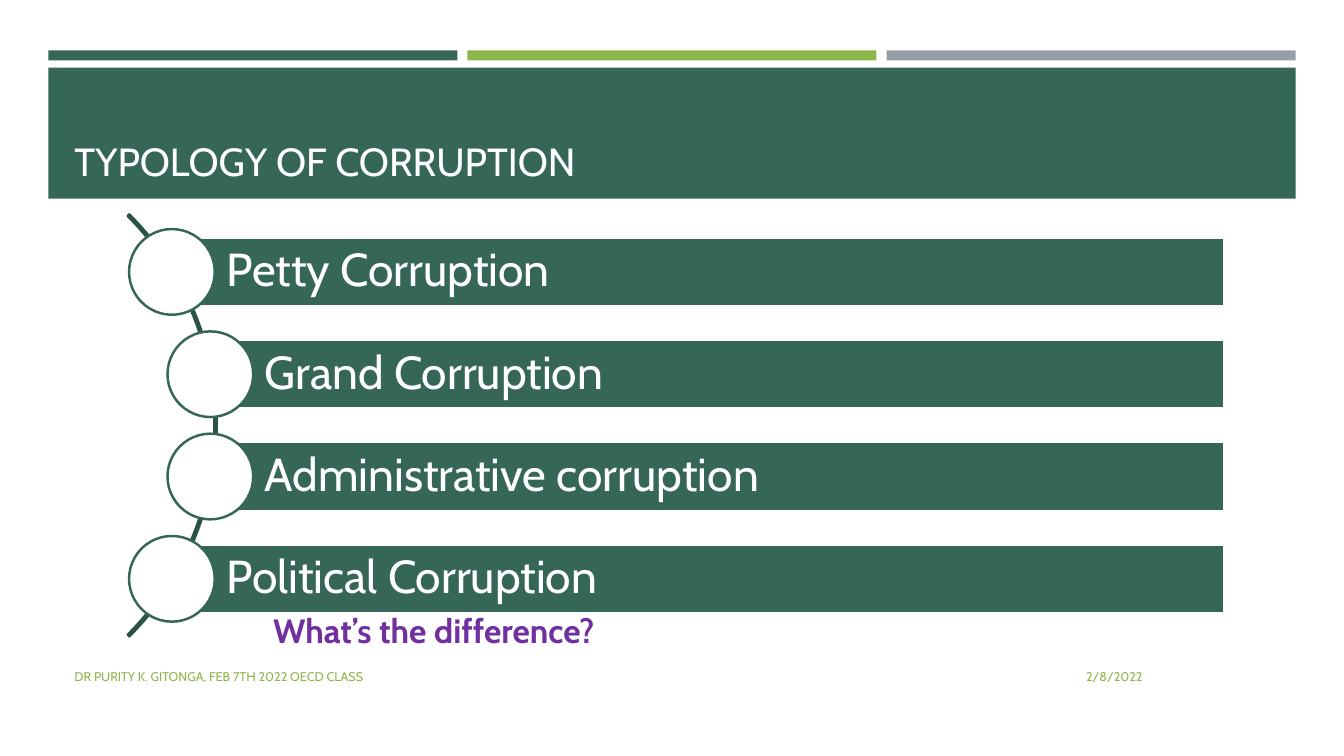
from math import sqrt
from pptx import Presentation
from pptx import util as u
from pptx.dml.color import RGBColor
from pptx.enum import shapes, text

WIDE, HIGH = 13.33, 7.5
GREEN, LIME, GREY = "366658", "8CB64A", "969FA7"
DARK, WHITE, PURPLE = "2B5246", "FFFFFF", "7030A0"
FORM = shapes.MSO_SHAPE
ALIGN = text.PP_ALIGN
ANCHOR = text.MSO_ANCHOR


def tint(code):
    return RGBColor.from_string(code)


def draw(slide, form, box, fill=None, line=None):
    part = slide.shapes.add_shape(form, *map(u.Inches, box))
    part.shadow.inherit = False
    if fill:
        part.fill.solid()
        part.fill.fore_color.rgb = tint(fill)
    else:
        part.fill.background()
    if line:
        part.line.color.rgb = tint(line)
        part.line.width = u.Pt(1.75)
    else:
        part.line.fill.background()
    return part


def write(part, words, size, color, bold=False, align=ALIGN.LEFT,
          anchor=ANCHOR.MIDDLE, inset=0.1, space=1.0):
    frame = part.text_frame
    frame.word_wrap = True
    frame.vertical_anchor = anchor
    frame.margin_left = u.Inches(inset)
    para = frame.paragraphs[0]
    para.alignment = align
    para.line_spacing = space
    run = para.add_run()
    run.text = words
    run.font.name = "Cabin"
    run.font.size = u.Pt(size)
    run.font.bold = bold
    run.font.color.rgb = tint(color)


def label(slide, box, words, size, color, **form):
    part = slide.shapes.add_textbox(*map(u.Inches, box))
    write(part, words, size, color, **form)


def header(slide, box, title):
    left, top, width, height = box
    gap = 0.1
    strip = (width - 2 * gap) / 3
    for col, fill in enumerate((GREEN, LIME, GREY)):
        draw(slide, FORM.RECTANGLE,
             (left + col * (strip + gap), top, strip, 0.1), fill)
    band = top + 0.17
    draw(slide, FORM.RECTANGLE, (left, band, width, height - 0.17), GREEN)
    label(slide, (left + 0.16, band + 0.1, width - 0.32, height - 0.36),
          title, 28, WHITE, anchor=ANCHOR.BOTTOM)


def arc_list(slide, box, names):
    left, top, width, height = box
    ring, orbit, bar, node = 2.96, 2.94, 0.68, 0.85
    hub, mid = left - 2.08, top + height / 2
    arc = draw(slide, FORM.BLOCK_ARC,
               (hub - ring, mid - ring, 2 * ring, 2 * ring), line=DARK)
    for index, value in enumerate((189, 27, 0.004)):
        arc.adjustments[index] = value
    pitch = height / len(names)
    for row, name in enumerate(names):
        drop = (row - (len(names) - 1) / 2) * pitch
        x, y = hub + sqrt(orbit ** 2 - drop ** 2), mid + drop
        strip = draw(slide, FORM.RECTANGLE,
                     (x, y - bar / 2, left + width - x, bar), GREEN, WHITE)
        write(strip, name, 33, WHITE, inset=0.54, space=0.9)
        draw(slide, FORM.OVAL,
             (x - node / 2, y - node / 2, node, node), WHITE, GREEN)


def footer(slide, box, note, date):
    left, top, width, height = box
    label(slide, (left + width - 3.11, top, 3.11, height), date, 9, LIME,
          align=ALIGN.RIGHT)
    label(slide, (left, top, 7.56, height), note, 9, LIME)


def main():
    deck = Presentation()
    deck.slide_width, deck.slide_height = u.Inches(WIDE), u.Inches(HIGH)
    slide = deck.slides.add_slide(deck.slide_layouts[6])
    header(slide, (0.48, 0.5, 12.37, 1.47), "TYPOLOGY OF CORRUPTION")
    arc_list(slide, (1.27, 2.19, 10.87, 4.06),
             ("Petty Corruption", "Grand Corruption",
              "Administrative corruption", "Political Corruption"))
    footer(slide, (0.64, 6.51, 10.79, 0.4),
           "DR PURITY K. GITONGA, FEB 7TH 2022 OECD CLASS", "2/8/2022")
    label(slide, (2.61, 6, 6.31, 0.5), "What’s the difference?", 24, PURPLE,
          bold=True, anchor=ANCHOR.TOP)
    deck.save("out.pptx")


if __name__ == "__main__":
    main()
